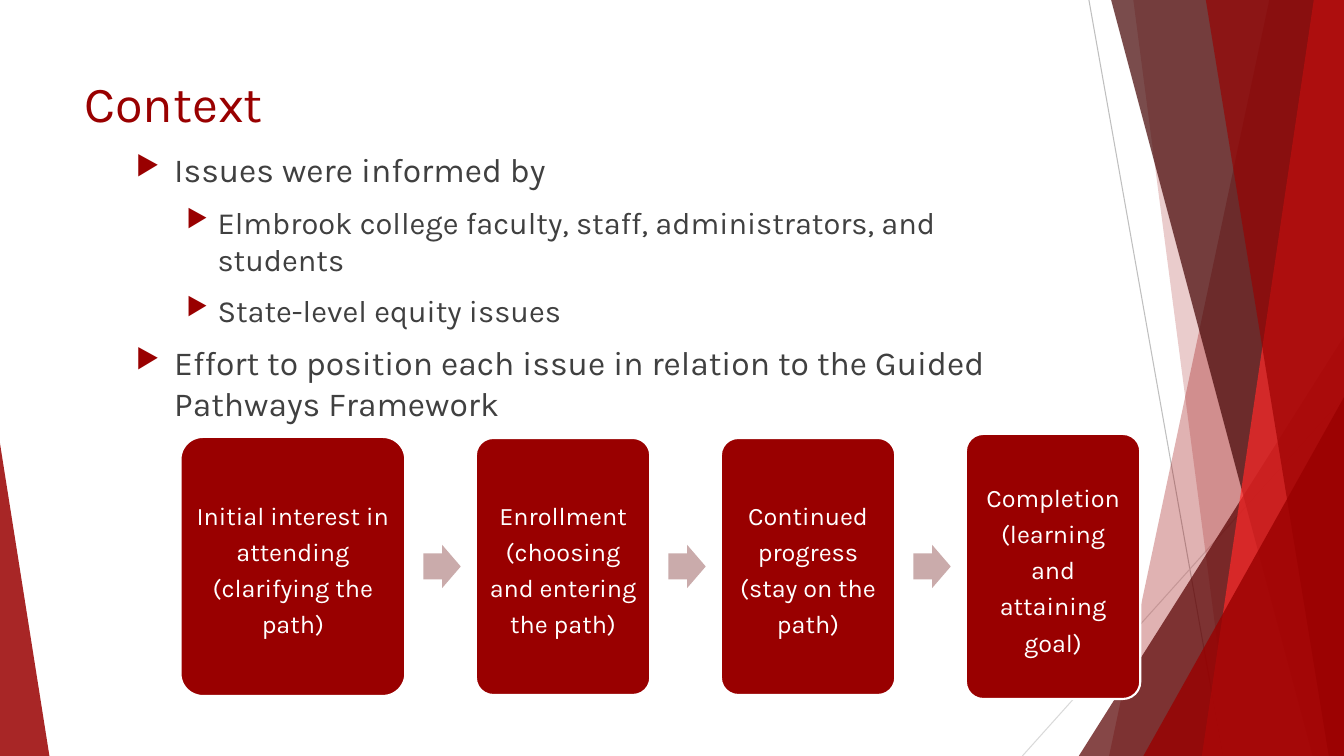
import pptx
import pptx.util
import pptx.dml.color
import pptx.enum.shapes
import pptx.enum.text
import pptx.oxml.ns
import lxml.etree

Inches = pptx.util.Inches
Pt = pptx.util.Pt
KIND = pptx.enum.shapes.MSO_SHAPE
ALIGN = pptx.enum.text.PP_ALIGN
ANCHOR = pptx.enum.text.MSO_ANCHOR
qn = pptx.oxml.ns.qn

HUES = {
    "red": "990000", "maroon": "580101", "dark": "420101", "bright": "FF2929",
    "pink": "CAABAB", "text": "404040", "white": "FFFFFF",
    "gray": "BFBFBF", "pale": "D9D9D9",
}


def rgb(hue):
    return pptx.dml.color.RGBColor.from_string(HUES[hue])


def add(parent, tag, **attrs):
    return lxml.etree.SubElement(parent, qn(tag), attrs)


class Deck:
    font = "Karla"

    def __init__(self):
        self.prs = pptx.Presentation()
        self.prs.slide_width = Inches(13.33)
        self.prs.slide_height = Inches(7.5)
        self.slide = self.prs.slides.add_slide(self.prs.slide_layouts[6])
        self.shapes = self.slide.shapes

    def paint(self, shape, hue, alpha=100):
        """Flat fill without outline or shadow; alpha is opacity in percent."""
        shape.shadow.inherit = False
        shape.fill.solid()
        shape.fill.fore_color.rgb = rgb(hue)
        shape.line.fill.background()
        if alpha < 100:
            color = shape._element.spPr.find(qn("a:solidFill"))[0]
            add(color, "a:alpha", val=str(alpha * 1000))

    def line(self, start, end, hue):
        line = self.shapes.add_connector(
            pptx.enum.shapes.MSO_CONNECTOR.STRAIGHT,
            *(Inches(v) for v in start + end))
        line.line.color.rgb = rgb(hue)
        line.line.width = Pt(0.75)
        add(line._element.spPr, "a:effectLst")

    def shard(self, points, hue, alpha):
        spots = [(Inches(x), Inches(y)) for x, y in points]
        pen = self.shapes.build_freeform(*spots[0])
        pen.add_line_segments(spots[1:], close=True)
        self.paint(pen.convert_to_shape(), hue, alpha)

    def shape(self, kind, box, hue, adjs, alpha=100):
        shape = self.shapes.add_shape(kind, *(Inches(v) for v in box))
        for i, adj in enumerate(adjs):
            shape.adjustments[i] = adj
        self.paint(shape, hue, alpha)
        return shape

    def style(self, para, size, hue):
        for run in para.runs:
            run.font.name = self.font
            run.font.size = Pt(size)
            run.font.color.rgb = rgb(hue)

    def frame(self, box):
        frame = self.shapes.add_textbox(*(Inches(v) for v in box)).text_frame
        frame.word_wrap = True
        return frame

    def title(self, text, box):
        frame = self.frame(box)
        frame.text = text
        self.style(frame.paragraphs[0], 36, "red")

    def bullets(self, items, box):
        frame = self.frame(box)
        frame.text = "\n".join(text for _, text in items)
        for para, (level, _) in zip(frame.paragraphs, items):
            para.level = level
            para.space_before = Pt(10)
            self.style(para, (24, 22)[level], "text")
            props = para._p.get_or_add_pPr()
            props.set("marL", str(Inches((0.38, 0.81)[level])))
            props.set("indent", str(-Inches((0.38, 0.31)[level])))
            add(add(props, "a:buClr"), "a:srgbClr", val=HUES["red"])
            add(props, "a:buSzPct", val="80000")
            add(props, "a:buChar", char="▶")

    def card(self, text, box):
        card = self.shape(KIND.ROUNDED_RECTANGLE, box, "red", [0.1])
        card.line.color.rgb = rgb("white")
        card.line.width = Pt(1.5)
        frame = card.text_frame
        frame.text = text
        frame.word_wrap = True
        frame.vertical_anchor = ANCHOR.MIDDLE
        frame.margin_left = frame.margin_right = Inches(0.07)
        frame.margin_top = frame.margin_bottom = Inches(0.07)
        para = frame.paragraphs[0]
        para.alignment = ALIGN.CENTER
        para.line_spacing = 1.2
        self.style(para, 18, "white")

    def flow(self, steps, left, mid, gap):
        """Row of cards centred on mid, with an arrow in each gap."""
        for i, (text, width, height) in enumerate(steps):
            if i:
                self.shape(KIND.RIGHT_ARROW,
                           (left - gap + 0.18, mid - 0.43 / 2, 0.37, 0.43),
                           "pink", [0.6, 0.5])
            self.card(text, (left, mid - height / 2, width, height))
            left += width + gap

    def facets(self):
        """Red facets along the right edge and in the lower left corner."""
        right, base = 13.33, 7.5
        self.line((10.8, 0), (12.13, base), "gray")
        self.line((right, 3.94), (10.14, base), "pale")

        def strip(top, foot, hue, alpha):
            self.shard([(top, 0), (right, 0), (right, base), (foot, base)],
                       hue, alpha)

        def wedge(left, top, width, tip, hue, alpha):
            self.shape(KIND.ISOSCELES_TRIANGLE,
                       (left, top, width, base - top), hue, [tip], alpha)

        strip(12.59, 11, "red", 30)
        strip(11.24, 12.22, "red", 20)
        wedge(10.7, 3.34, 2.63, 1, "maroon", 72)
        strip(11.02, 13.02, "dark", 70)
        strip(13.03, 11.92, "bright", 70)
        strip(11.96, 13.18, "red", 65)
        wedge(11.34, 3.94, 1.99, 1, "red", 80)
        wedge(0, 4.4, 0.49, 0, "red", 85)


def main():
    deck = Deck()
    deck.facets()
    deck.title("Context", (0.74, 0.67, 9.4, 1.44))
    deck.bullets([
        (0, "Issues were informed by"),
        (1, "Elmbrook college faculty, staff, administrators, and students"),
        (1, "State-level equity issues"),
        (0, "Effort to position each issue in relation to the Guided "
            "Pathways Framework"),
    ], (1.25, 1.43, 9.4, 4.63))
    deck.flow([
        ("Initial interest in attending (clarifying the path)", 2.23, 2.57),
        ("Enrollment (choosing and entering the path)", 1.73, 2.55),
        ("Continued progress (stay on the path)", 1.73, 2.55),
        ("Completion (learning and attaining goal)", 1.73, 2.63),
    ], left=1.79, mid=5.62, gap=0.7)
    deck.prs.save("out.pptx")


if __name__ == "__main__":
    main()
